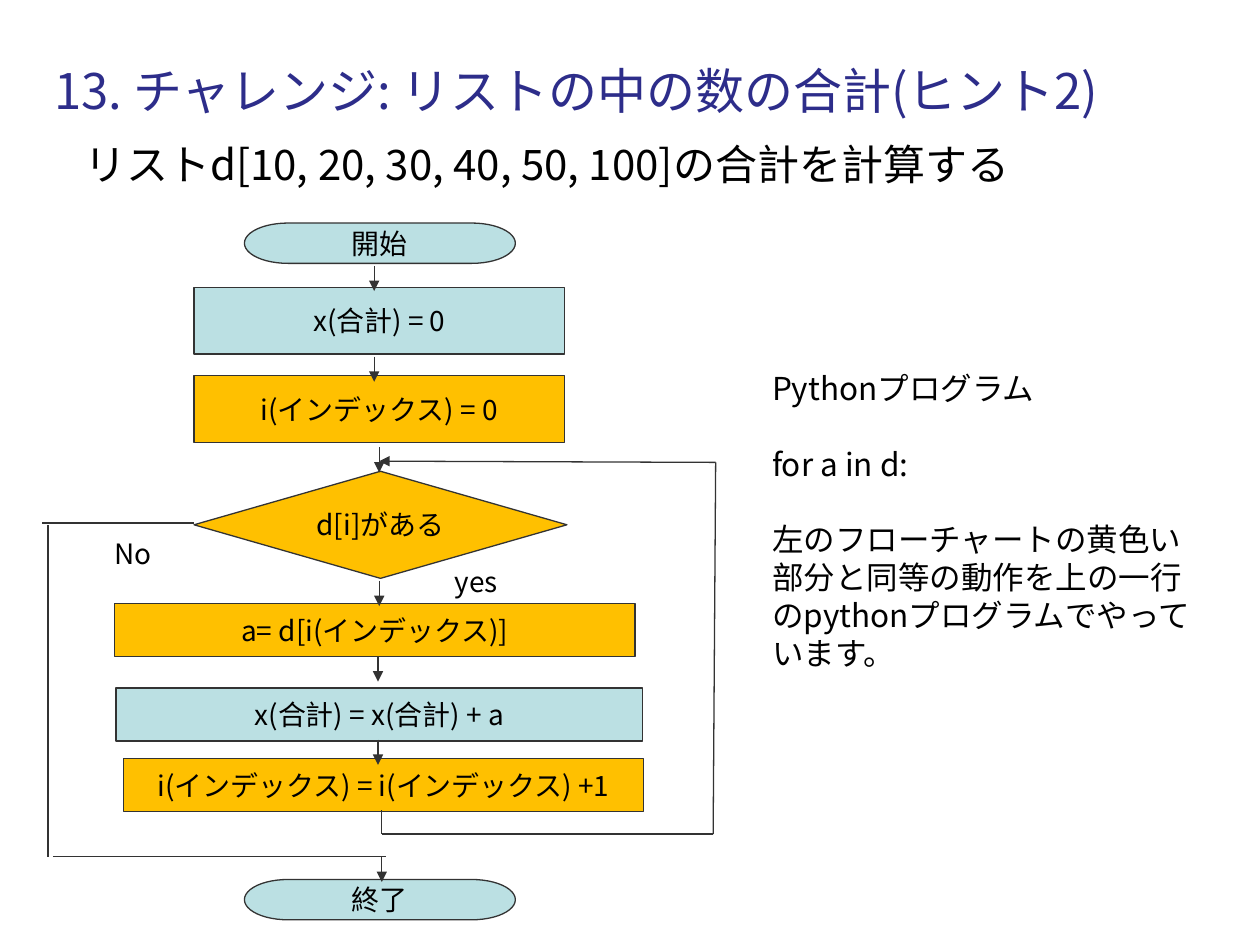
import lxml.etree
import pptx
import pptx.dml.color
import pptx.enum.shapes
import pptx.enum.text
import pptx.oxml.ns
import pptx.util

Inches = pptx.util.Inches
FONT = "Noto Sans CJK JP"
BLUE, YELLOW, LINE, BLACK, NAVY = "BBE0E3", "FFC000", "333333", "000000", "2D2D8A"
FLOW = pptx.enum.shapes.MSO_SHAPE
ALIGN = pptx.enum.text.PP_ALIGN
MIDDLE = pptx.enum.text.MSO_ANCHOR.MIDDLE
TOP = pptx.enum.text.MSO_ANCHOR.TOP


def color(hex_string):
    """Turn a hex string into a colour."""
    return pptx.dml.color.RGBColor.from_string(hex_string)


def add_child(parent, tag, **attributes):
    """Append a DrawingML element to a parent element."""
    return lxml.etree.SubElement(parent, pptx.oxml.ns.qn(tag), attributes)


def write(shape, paragraphs, size, align=ALIGN.LEFT, anchor=TOP, wrap=True, ink=BLACK, gap=0):
    """Fill a shape with evenly spaced paragraphs in one font."""
    frame = shape.text_frame
    frame.text = "\n".join(paragraphs)
    frame.word_wrap = wrap
    frame.vertical_anchor = anchor
    for paragraph in frame.paragraphs:
        paragraph.alignment = align
        paragraph.space_before = pptx.util.Pt(0)
        paragraph.space_after = pptx.util.Pt(gap)
        font = paragraph.font
        font.size = pptx.util.Pt(size)
        font.color.rgb = color(ink)
        font.name = FONT
        add_child(paragraph._p.pPr.find(pptx.oxml.ns.qn("a:defRPr")), "a:ea", typeface=FONT)


def set_title(slide, text):
    """Place and format the slide title."""
    title = slide.shapes.title
    title.left, title.top, title.width, title.height = map(Inches, (0.33, 0.43, 9.05, 0.57))
    write(title, [text], 28, anchor=MIDDLE, wrap=False, ink=NAVY)


def add_text(slide, box, paragraphs, size, **options):
    """Add a text box."""
    write(slide.shapes.add_textbox(*map(Inches, box)), paragraphs, size, **options)


def add_step(slide, kind, box, fill, text):
    """Add one flowchart step with centred text."""
    shape = slide.shapes.add_shape(kind, *map(Inches, box))
    shape.shadow.inherit = False
    shape.fill.solid()
    shape.fill.fore_color.rgb = color(fill)
    shape.line.color.rgb = color(LINE)
    shape.line.width = pptx.util.Pt(0.75)
    write(shape, [text], 16, align=ALIGN.CENTER, anchor=MIDDLE, wrap=False)


def add_line(slide, start, end, arrow=False):
    """Add a straight flow line, with an arrowhead at its end if asked."""
    straight = pptx.enum.shapes.MSO_CONNECTOR.STRAIGHT
    line = slide.shapes.add_connector(straight, *map(Inches, start + end))
    line.line.color.rgb = color(LINE)
    line.line.width = pptx.util.Pt(0.75)
    if arrow:
        add_child(line.line._get_or_add_ln(), "a:tailEnd", type="triangle")
    add_child(line._element.spPr, "a:effectLst")


def add_flowchart(slide):
    """Draw the steps, the flow lines and the branch labels."""
    steps = [
        (FLOW.FLOWCHART_TERMINATOR, (1.94, 1.77, 2.15, 0.32), BLUE, "開始"),
        (FLOW.FLOWCHART_PROCESS, (1.54, 2.28, 2.94, 0.53), BLUE, "x(合計) = 0"),
        (FLOW.FLOWCHART_PROCESS, (1.54, 2.98, 2.94, 0.53), YELLOW, "i(インデックス) = 0"),
        (FLOW.FLOWCHART_DECISION, (1.54, 3.74, 2.96, 0.85), YELLOW, "d[i]がある"),
        (FLOW.FLOWCHART_PROCESS, (0.91, 4.79, 4.13, 0.42), YELLOW, "a= d[i(インデックス)]"),
        (FLOW.FLOWCHART_PROCESS, (0.92, 5.46, 4.18, 0.42), BLUE, "x(合計) = x(合計) + a"),
        (FLOW.FLOWCHART_PROCESS, (0.98, 6.02, 4.13, 0.42), YELLOW,
         "i(インデックス) = i(インデックス) +1"),
        (FLOW.FLOWCHART_TERMINATOR, (1.94, 6.98, 2.15, 0.32), BLUE, "終了"),
    ]
    for step in steps:
        add_step(slide, *step)

    down_arrows = [(2.97, 2.11), (2.97, 2.83), (3.01, 3.55), (3.01, 4.61),
                   (3, 5.21), (3, 5.87), (3.03, 6.8)]
    for x, y in down_arrows:
        add_line(slide, (x, y), (x, y + 0.2), arrow=True)

    loop_back = [(3.03, 6.43), (3.03, 6.62), (5.66, 6.62), (5.68, 3.67), (3.01, 3.66)]
    for start, end in zip(loop_back, loop_back[1:]):
        add_line(slide, start, end, arrow=end == loop_back[-1])

    exit_lines = [((1.54, 4.15), (0.33, 4.15)), ((0.38, 4.17), (0.38, 6.8)),
                  ((0.42, 6.8), (3.06, 6.8))]
    for start, end in exit_lines:
        add_line(slide, start, end)

    add_text(slide, (0.64, 4.21, 0.83, 0.38), ["No"], 16, align=ALIGN.CENTER)
    add_text(slide, (3.26, 4.43, 1.04, 0.38), ["yes"], 16, align=ALIGN.CENTER)


def main():
    """Build the slide and save it."""
    presentation = pptx.Presentation()
    presentation.slide_width, presentation.slide_height = Inches(10), Inches(7.5)
    slide = presentation.slides.add_slide(presentation.slide_layouts.get_by_name("Title Only"))
    set_title(slide, "13. チャレンジ: リストの中の数の合計(ヒント2)")
    add_text(slide, (0.57, 1.05, 9.13, 0.5),
             ["リストd[10, 20, 30, 40, 50, 100]の合計を計算する"], 24)
    add_flowchart(slide)
    explanation = [
        "Pythonプログラム",
        "for a in d:",
        "左のフローチャートの黄色い部分と同等の動作を上の一行のpythonプログラムでやっています。",
    ]
    add_text(slide, (6.03, 2.88, 3.57, 2.52), explanation, 18, gap=21.6)
    presentation.save("out.pptx")


if __name__ == "__main__":
    main()
